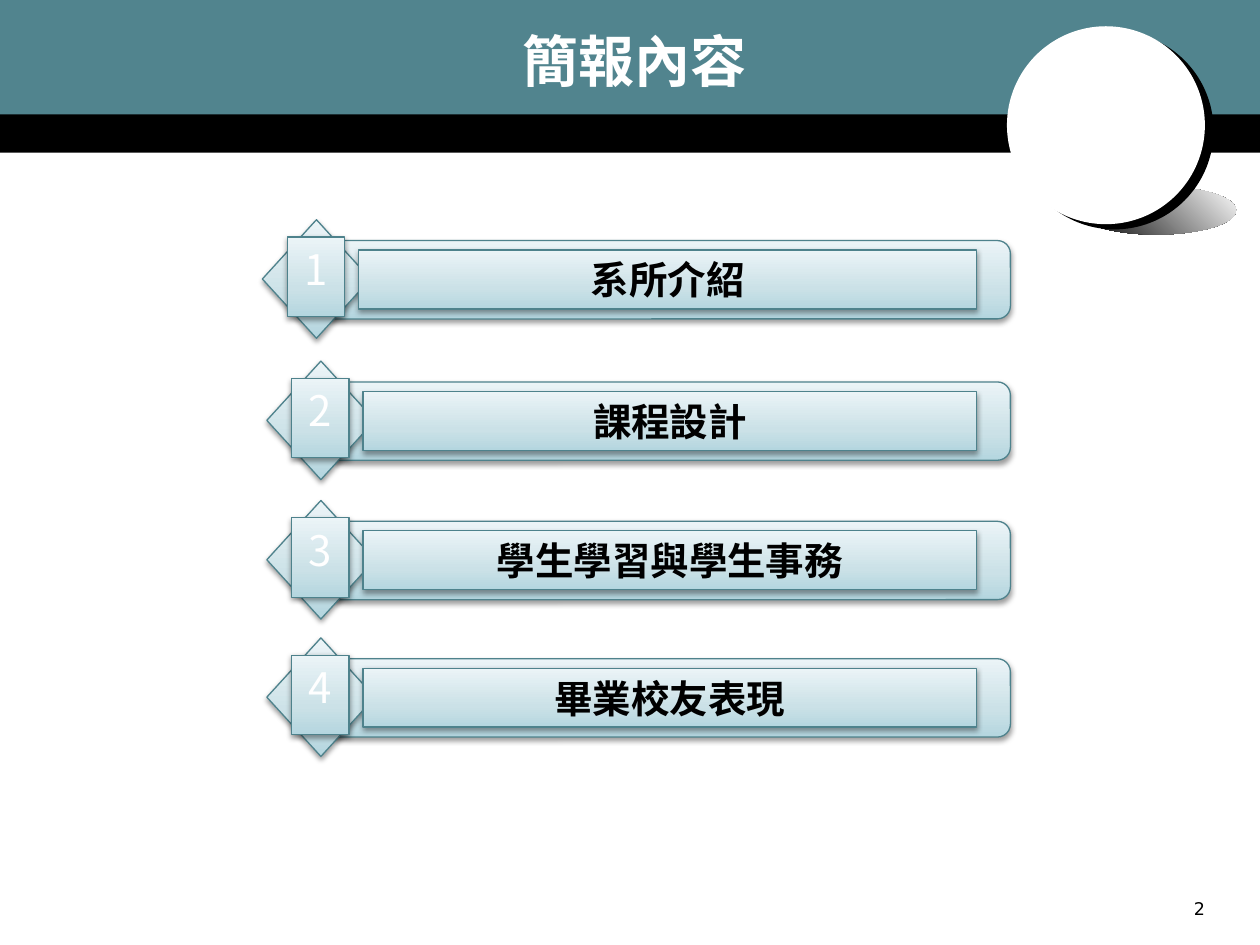
import copy
import pptx
import pptx.util
import pptx.dml.color
import pptx.enum.shapes
import pptx.enum.text
import pptx.oxml.ns
from lxml import etree

Cm = pptx.util.Cm
Pt = pptx.util.Pt
qn = pptx.oxml.ns.qn
Kind = pptx.enum.shapes.MSO_SHAPE
Align = pptx.enum.text.PP_ALIGN
Anchor = pptx.enum.text.MSO_ANCHOR


def hue(code):
    return pptx.dml.color.RGBColor.from_string(code)


def draw(home, kind, box, stops, turn=0, edge=None, shade=None):
    shape = home.shapes.add_shape(kind, *[Cm(n) for n in box])
    shape.shadow.inherit = False
    if len(stops) == 1:
        shape.fill.solid()
        shape.fill.fore_color.rgb = hue(stops[0][1])
    else:
        shape.fill.gradient()
        shape.fill.gradient_angle = turn
        marks = shape._element.spPr.find(qn("a:gradFill")).find(qn("a:gsLst"))
        while len(marks) < len(stops):
            marks.append(copy.deepcopy(marks[-1]))
        for stop, (place, code) in zip(shape.fill.gradient_stops, stops):
            stop.position = place
            stop.color.rgb = hue(code)
    if edge:
        shape.line.color.rgb = hue(edge)
        shape.line.width = Pt(0.75)
    else:
        shape.line.fill.background()
    if shade:
        blur, gap, angle, alpha = shade
        glow = etree.SubElement(
            shape._element.spPr.find(qn("a:effectLst")), qn("a:outerShdw"),
            blurRad=str(Pt(blur)), dist=str(Pt(gap)),
            dir=str(angle * 60000), algn="ctr", rotWithShape="0")
        tone = etree.SubElement(glow, qn("a:srgbClr"), val="000000")
        etree.SubElement(tone, qn("a:alpha"), val=str(alpha * 1000))
    return shape


deck = pptx.Presentation()
deck.slide_width = Cm(25.4)
deck.slide_height = Cm(19.05)
slide = deck.slides.add_slide(deck.slide_layouts[6])

draw(slide, Kind.RECTANGLE, (0, 2.21, 25.4, 0.87), [(0, "000000")])
draw(slide, Kind.RECTANGLE, (0, 0, 25.4, 2.31), [(0, "51848E")])
globe = slide.shapes.add_group_shape()
draw(globe, Kind.OVAL, (21.69, 3.75, 3.23, 0.98),
     [(0, "000000"), (1, "FFFFFF")], 45)
draw(globe, Kind.OVAL, (20.3, 0.53, 3.99, 3.99), [(0, "FFFFFF")],
     shade=(0, 5.8, 31, 100))

cjk = "Noto Sans CJK SC"
title = slide.shapes.add_textbox(Cm(1.27), Cm(0.43), Cm(23.06), Cm(1.57))
texts = [(title, "簡報內容", 32, cjk, "FFFFFF", True, Align.CENTER, Anchor.MIDDLE, True)]

blend = [(0, "B4D6DF"), (0.35, "CBE1E7"), (1, "EBF4F7")]
rows = [
    ("系所介紹", 4.85, 0),
    ("課程設計", 7.7, 0.09),
    ("學生學習與學生事務", 10.51, 0.09),
    ("畢業校友表現", 13.28, 0.09),
]
for count, (topic, top, shift) in enumerate(rows, 1):
    group = slide.shapes.add_group_shape()
    parts = []
    for kind, left, rise, width, height in [
        (Kind.ROUNDED_RECTANGLE, 6.5, 0, 13.87 - shift, 1.58),
        (Kind.DIAMOND, 5.29, -0.42, 2.18, 2.39),
        (Kind.RECTANGLE, 7.23, 0.19, 12.46 - shift, 1.19),
        (Kind.RECTANGLE, 5.79, -0.07, 1.16, 1.6),
    ]:
        box = (left + shift, top + rise, width, height)
        parts.append(draw(group, kind, box, blend, 90, "4E828C", (3.1, 1.6, 90, 38)))
    texts += [
        (parts[2], topic, 22, cjk, "000000", True, Align.CENTER, Anchor.MIDDLE, True),
        (parts[3], str(count), 24, cjk, "FFFFFF", False, Align.CENTER, Anchor.TOP, False),
    ]

page = slide.shapes.add_textbox(Cm(18.62), Cm(17.98), Cm(5.92), Cm(0.81))
texts.append((page, "2", 10, "DejaVu Sans", "000000", False, Align.RIGHT, Anchor.TOP, True))

for shape, words, size, face, code, bold, align, anchor, wrap in texts:
    frame = shape.text_frame
    frame.word_wrap = wrap
    frame.vertical_anchor = anchor
    para = frame.paragraphs[0]
    para.alignment = align
    run = para.add_run()
    run.text = words
    run.font.size = Pt(size)
    run.font.bold = bold
    run.font.color.rgb = hue(code)
    run.font.name = face
    etree.SubElement(run.font._element, qn("a:ea"), typeface=face)

deck.save("out.pptx")
